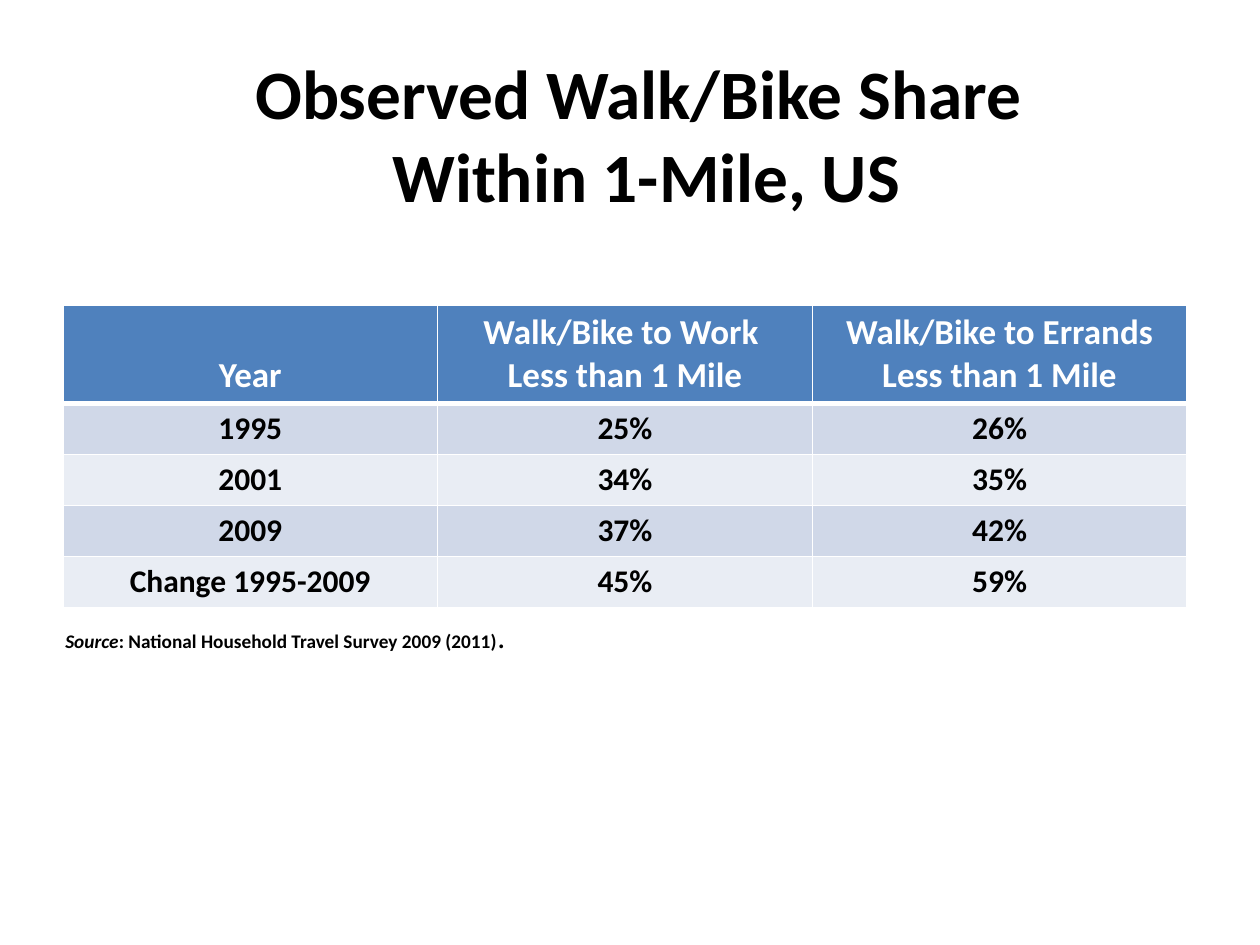
from typing import NamedTuple

from lxml import etree
from pptx import Presentation
from pptx.dml.color import RGBColor
from pptx.enum.text import MSO_ANCHOR, MSO_AUTO_SIZE, PP_ALIGN
from pptx.oxml.ns import qn
from pptx.util import Inches, Pt

CENTER = PP_ALIGN.CENTER
MIDDLE, BOTTOM = MSO_ANCHOR.MIDDLE, MSO_ANCHOR.BOTTOM
FIT_SHAPE = MSO_AUTO_SIZE.SHAPE_TO_FIT_TEXT
BLACK = RGBColor(0x00, 0x00, 0x00)
WHITE = RGBColor(0xFF, 0xFF, 0xFF)
BLUE = RGBColor(0x4F, 0x81, 0xBD)
BANDS = (RGBColor(0xD0, 0xD8, 0xE8), RGBColor(0xE9, 0xED, 0xF4))
FONT = "Calibri"


class RowStyle(NamedTuple):
    fill: RGBColor
    color: RGBColor
    size: float
    bottom_width: float


ROWS = [
    ("Year", "Walk/Bike to Work \nLess than 1 Mile",
     "Walk/Bike to Errands Less than 1 Mile"),
    ("1995", "25%", "26%"),
    ("2001", "34%", "35%"),
    ("2009", "37%", "42%"),
    ("Change 1995-2009", "45%", "59%"),
]


def set_font(font, size: float, color: RGBColor = BLACK, **extra) -> None:
    values = {"name": FONT, "size": Pt(size), "bold": True, **extra}
    for name, value in values.items():
        setattr(font, name, value)
    font.color.rgb = color


def add_borders(cell, top: float, bottom: float) -> None:
    tc_pr = cell._tc.get_or_add_tcPr()
    for side, width in {"L": 1, "R": 1, "T": top, "B": bottom}.items():
        ln = etree.SubElement(tc_pr, qn(f"a:ln{side}"), w=str(Pt(width)))
        fill = etree.SubElement(ln, qn("a:solidFill"))
        etree.SubElement(fill, qn("a:srgbClr"), val=str(WHITE))


def fill_cell(cell, text: str, style: RowStyle, top: float) -> None:
    add_borders(cell, top, style.bottom_width)
    cell.fill.solid()
    cell.fill.fore_color.rgb = style.fill
    cell.vertical_anchor = BOTTOM
    cell.text = text
    for p in cell.text_frame.paragraphs:
        p.alignment = CENTER
        for r in p.runs:
            set_font(r.font, style.size, style.color)


prs = Presentation()
prs.slide_width, prs.slide_height = Inches(10), Inches(7.5)
s = prs.slides.add_slide(prs.slide_layouts[5])

# Title
title = s.shapes.title
title.left, title.top = Inches(0.67), Inches(0.43)
title.width, title.height = Inches(8.92), Inches(1.25)
tf = title.text_frame
tf.vertical_anchor = MIDDLE
tf.auto_size = MSO_AUTO_SIZE.NONE
p = tf.paragraphs[0]
p.text = "Observed Walk/Bike Share \vWithin 1-Mile, US"
p.alignment = CENTER
for r in p.runs:
    set_font(r.font, 39.6)

# Walk/bike share table
header = RowStyle(BLUE, WHITE, 20, 3)
table = s.shapes.add_table(len(ROWS), len(ROWS[0]), Inches(0.5), Inches(2.42),
                           Inches(8.92), Inches(2.39)).table
top = 1
for i, texts in enumerate(ROWS):
    style = RowStyle(BANDS[(i - 1) % 2], BLACK, 18, 1) if i else header
    table.rows[i].height = Inches(0.405 if i else 0.77)
    for j, text in enumerate(texts):
        fill_cell(table.cell(i, j), text, style, top)
    top = style.bottom_width

# Source line
box = s.shapes.add_textbox(Inches(0.42), Inches(4.85), Inches(3.8), Inches(0.4))
tf = box.text_frame
tf.word_wrap = False
tf.auto_size = FIT_SHAPE
p = tf.paragraphs[0]
for text, size, extra in [
    ("Source", 11, {"italic": True}),
    (": National Household Travel Survey 2009 (2011)", 11, {}),
    (".", 18, {"bold": False}),
]:
    r = p.add_run()
    r.text = text
    set_font(r.font, size, **extra)

prs.save("out.pptx")
